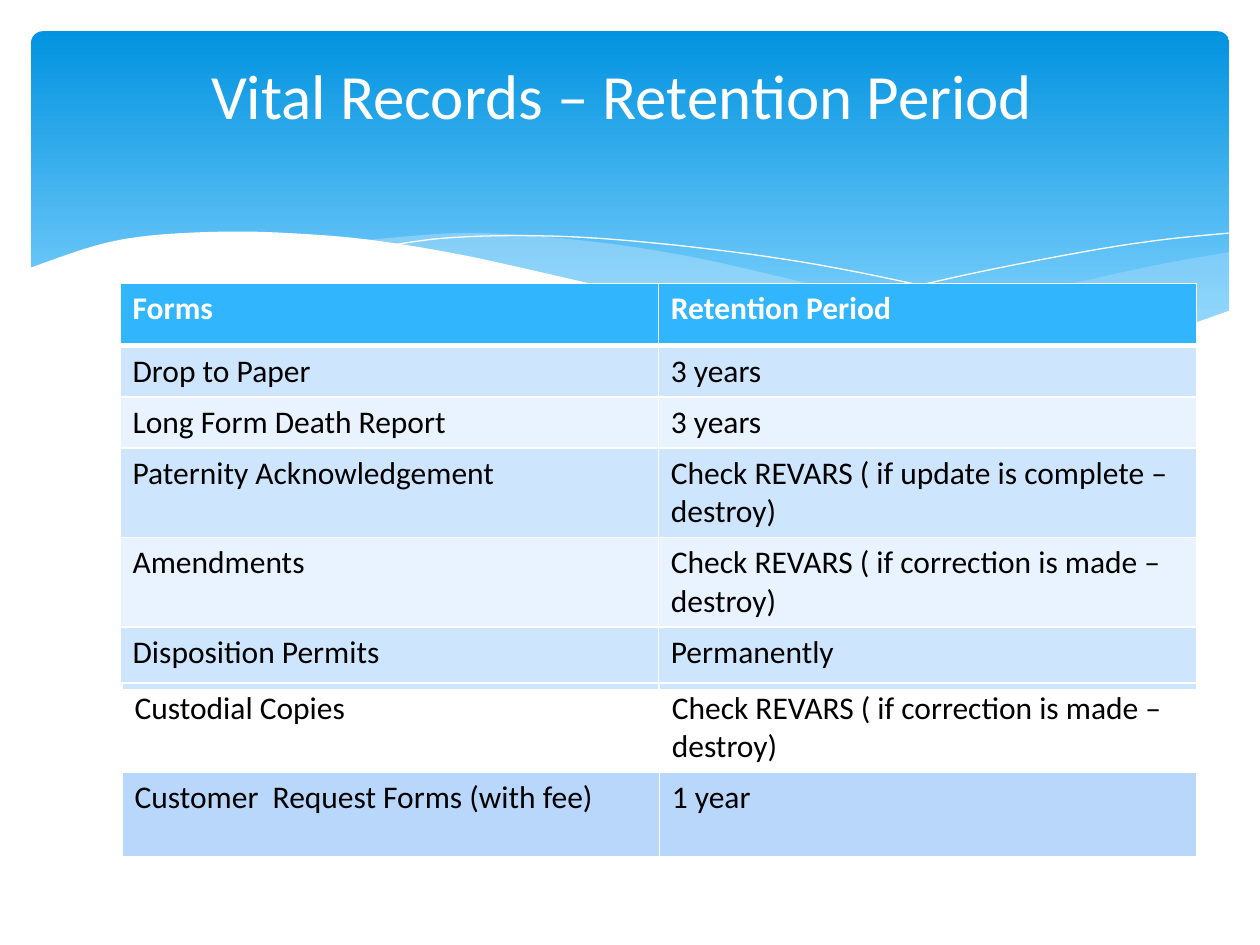
from lxml.etree import SubElement
from pptx import Presentation
from pptx.dml.color import RGBColor
from pptx.enum.shapes import MSO_SHAPE
from pptx.enum.text import MSO_ANCHOR, PP_ALIGN
from pptx.oxml import parse_xml
from pptx.oxml.ns import nsdecls, qn
from pptx.util import Cm, Pt

FONT = "Calibri"
WHITE = RGBColor(0xFF, 0xFF, 0xFF)
BLACK = RGBColor(0x00, 0x00, 0x00)
SKY_TOP = RGBColor(0x02, 0x93, 0xE0)
SKY_BOTTOM = RGBColor(0x83, 0xD3, 0xFE)
WAVE = RGBColor(0xC6, 0xE7, 0xFC)
HEADER = RGBColor(0x31, 0xB6, 0xFD)
BAND_DARK = RGBColor(0xCE, 0xE5, 0xFE)
BAND_LIGHT = RGBColor(0xE8, 0xF3, 0xFF)
LAST_ROW = RGBColor(0xB9, 0xD6, 0xFB)

# Content
TITLE = "Vital Records – Retention Period"
# Each row: height in cm, fill, form, retention period
MAIN_ROWS = [
    (1.26, HEADER, "Forms", "Retention Period"),
    (1.0, BAND_DARK, "Drop to Paper", "3 years"),
    (1.0, BAND_LIGHT, "Long Form Death Report", "3 years"),
    (1.76, BAND_DARK, "Paternity Acknowledgement", "Check REVARS ( if update is complete – destroy)"),
    (1.76, BAND_LIGHT, "Amendments", "Check REVARS ( if correction is made – destroy)"),
    (1.26, BAND_DARK, "Disposition Permits", "Permanently"),
]
MORE_ROWS = [
    (1.8, None, "Custodial Copies", "Check REVARS ( if correction is made – destroy)"),
    (1.7, LAST_ROW, "Customer  Request Forms (with fee)", "1 year"),
]

# Banner curves in cm; every shape is a chain of smooth curves
RIGHT_WAVE = [
    [(24.79, 5.08), (23.39, 5.33), (21.87, 5.66), (19.79, 6.15), (17.93, 6.53), (16.79, 6.73)],
    [(16.79, 6.73), (18.26, 6.91), (19.53, 7.04), (20.68, 7.06), (21.92, 6.99), (23.19, 6.78),
     (24.79, 6.27)],
]
MIDDLE_WAVE = [
    [(22.68, 6.93), (20.5, 6.6), (17.93, 6.1), (15.98, 5.64), (14.1, 5.21), (12.42, 4.93),
     (10.67, 4.75), (9.17, 4.7), (7.26, 4.85)],
    [(7.26, 4.85), (9.19, 5.16), (11.4, 5.64), (13.46, 6.1), (15.7, 6.55), (17.65, 6.86),
     (19.33, 7.04), (20.78, 7.06), (21.77, 7.04), (22.68, 6.93)],
]
LEFT_LINE = [
    [(7.85, 4.95), (8.97, 4.8), (10.57, 4.75), (12.42, 4.83), (14.78, 5.08), (16.89, 5.41),
     (19.3, 5.92), (21.11, 6.38), (23.04, 6.91)],
]
RIGHT_LINE = [
    [(15.57, 6.53), (17.65, 5.97), (19.71, 5.49), (22, 5.05), (23.47, 4.83), (24.77, 4.7)],
]
WHITE_WAVE = [
    [(24.82, 6.25), (23.62, 6.65), (22.22, 6.93), (20.55, 7.04), (18.44, 6.91), (15.9, 6.55),
     (13.44, 6.07), (11.35, 5.59), (9.27, 5.13), (7.42, 4.83), (5.84, 4.7), (4.5, 4.67),
     (3.02, 4.75), (1.93, 4.95), (0.58, 5.41)],
    [(0.58, 8.36), (24.82, 8.36)],
]
STEPS = 6


def smooth(knots):
    """Points of a Catmull-Rom curve through the knots."""
    padded = [knots[0], *knots, knots[-1]]
    points = [knots[0]]
    for before, start, end, after in zip(padded, padded[1:], padded[2:], padded[3:]):
        for step in range(1, STEPS + 1):
            t = step / STEPS
            points.append(tuple(
                (2 * b + (c - a) * t + (2 * a - 5 * b + 4 * c - d) * t ** 2
                 + (3 * b - a - 3 * c + d) * t ** 3) / 2
                for a, b, c, d in zip(before, start, end, after)))
    return points


def add_curve(page, curves, fill=None, opacity=None):
    points = [(Cm(x), Cm(y)) for curve in curves for x, y in smooth(curve)]
    builder = page.shapes.build_freeform(*points[0])
    builder.add_line_segments(points[1:], close=fill is not None)
    shape = builder.convert_to_shape()
    shape.shadow.inherit = False
    if fill is None:
        shape.fill.background()
        shape.line.color.rgb = WHITE
        shape.line.width = Pt(0)
        return
    shape.fill.solid()
    shape.fill.fore_color.rgb = fill
    shape.line.fill.background()
    if opacity is not None:
        color = shape.fill._xPr.find(qn("a:solidFill"))[0]
        SubElement(color, qn("a:alpha")).set("val", str(opacity * 1000))


def set_borders(cell, top=1, bottom=1):
    widths = {"L": 1, "R": 1, "T": top, "B": bottom}
    for index, (side, width) in enumerate(widths.items()):
        cell._tc.get_or_add_tcPr().insert(index, parse_xml(
            f'<a:ln{side} {nsdecls("a")} w="{Pt(width)}"><a:solidFill>'
            f'<a:srgbClr val="{WHITE}"/></a:solidFill></a:ln{side}>'))


def add_records(page, rows, left, top, width, has_header):
    height = sum(row[0] for row in rows)
    table = page.shapes.add_table(len(rows), 2, Cm(left), Cm(top), Cm(width), Cm(height)).table
    table.first_row = has_header
    table.horz_banding = False
    for r, (row_height, fill, *texts) in enumerate(rows):
        table.rows[r].height = Cm(row_height)
        is_header = has_header and r == 0
        for c, text in enumerate(texts):
            cell = table.cell(r, c)
            cell.text = text
            font = cell.text_frame.paragraphs[0].font
            font.name, font.size, font.bold = FONT, Pt(18), is_header
            font.color.rgb = WHITE if is_header else BLACK
            if fill is None:
                cell.fill.background()
            else:
                cell.fill.solid()
                cell.fill.fore_color.rgb = fill
            set_borders(cell, top=3 if has_header and r == 1 else 1, bottom=3 if is_header else 1)


deck = Presentation()
deck.slide_width, deck.slide_height = Cm(25.4), Cm(19.05)
page = deck.slides.add_slide(deck.slide_layouts[6])

# Banner with waves
banner = page.shapes.add_shape(MSO_SHAPE.ROUNDED_RECTANGLE, Cm(0.63), Cm(0.63), Cm(24.15), Cm(6.86))
banner.adjustments[0] = 0.034
banner.shadow.inherit = False
banner.line.fill.background()
banner.fill.gradient()
banner.fill.gradient_angle = 270
for stop, color, position in zip(banner.fill.gradient_stops, (SKY_TOP, SKY_BOTTOM), (0, 0.9)):
    stop.color.rgb = color
    stop.position = position
add_curve(page, RIGHT_WAVE, WAVE, 29)
add_curve(page, MIDDLE_WAVE, WAVE, 40)
add_curve(page, LEFT_LINE)
add_curve(page, RIGHT_LINE)
add_curve(page, WHITE_WAVE, WHITE)

# Tables and title
add_records(page, MAIN_ROWS, 2.42, 5.71, 21.7, True)

box = page.shapes.add_textbox(Cm(1.27), Cm(0.94), Cm(22.53), Cm(3.48))
frame = box.text_frame
frame.word_wrap = True
frame.vertical_anchor = MSO_ANCHOR.TOP
frame.margin_top = Cm(0.2)
para = frame.paragraphs[0]
para.text = TITLE
para.alignment = PP_ALIGN.CENTER
para.font.name, para.font.size = FONT, Pt(36)
para.font.color.rgb = WHITE

add_records(page, MORE_ROWS, 2.46, 13.77, 21.66, False)

deck.save("out.pptx")
